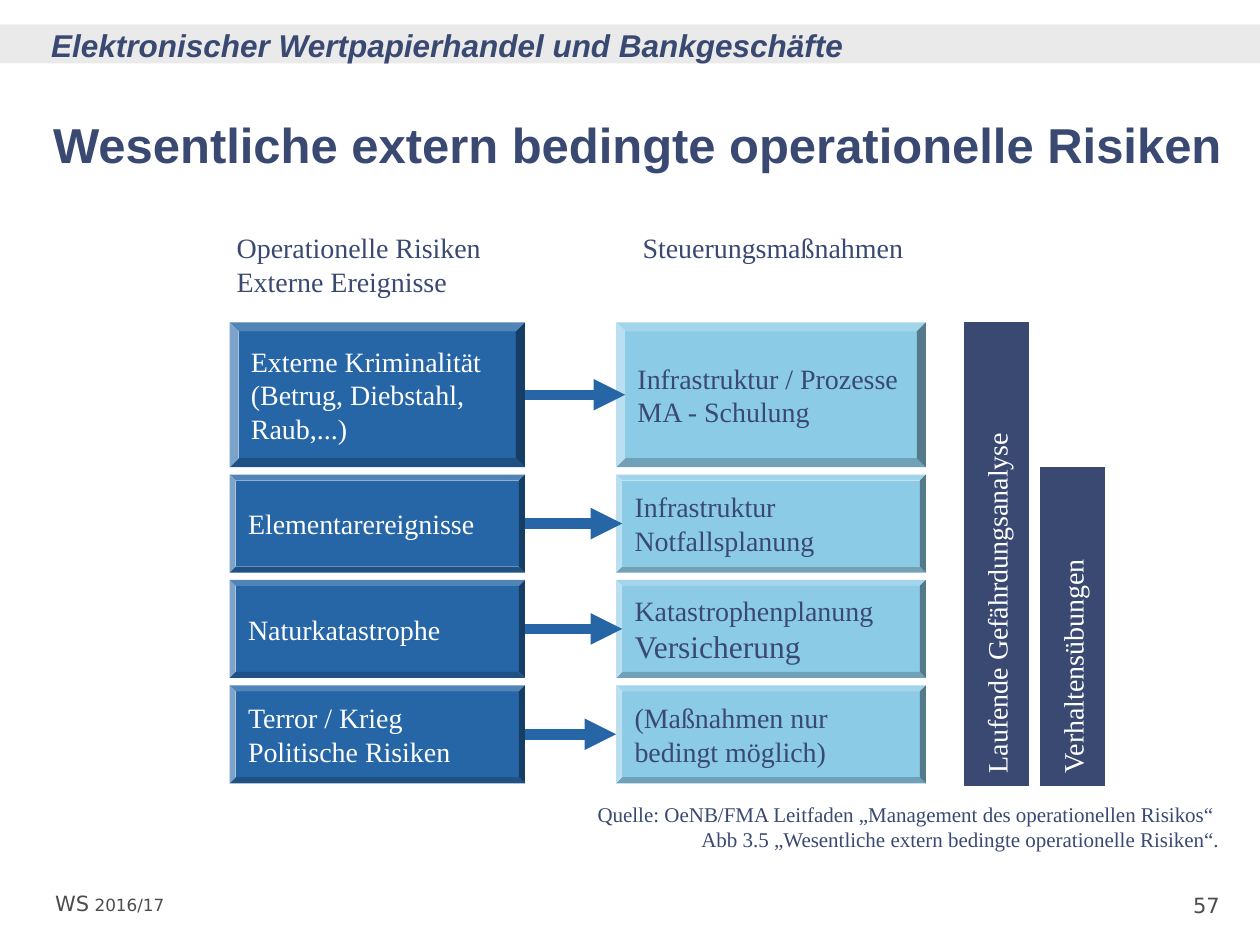
from lxml import etree
from pptx import Presentation
from pptx.dml.color import RGBColor
from pptx.enum.shapes import MSO_CONNECTOR, MSO_SHAPE
from pptx.enum.text import MSO_ANCHOR, PP_ALIGN
from pptx.oxml.ns import qn
from pptx.util import Pt

RECT, BAR, BEVEL = MSO_SHAPE.RECTANGLE, MSO_SHAPE.FLOWCHART_PROCESS, MSO_SHAPE.BEVEL
LINE = MSO_CONNECTOR.STRAIGHT
TOP, MID, LOW = MSO_ANCHOR.TOP, MSO_ANCHOR.MIDDLE, MSO_ANCHOR.BOTTOM
LEFT, RIGHT = PP_ALIGN.LEFT, PP_ALIGN.RIGHT
NAVY, BLUE, SKY, WHITE, GREY, BAND = "3A4972", "2666A6", "8BCBE6", "FFFFFF", "4D4D4D", "EAEAEA"
SERIF, SANS, SMALL = "Times New Roman", "Arial", "DejaVu Sans"


def color(code):
    return RGBColor.from_string(code)


def add(box, lines=(), kind=None, fill=None, ink=NAVY, font=SERIF, size=16,
        align=LEFT, anchor=TOP, pad=(5, 0), **style):
    place = [Pt(v) for v in box]
    if kind is None:
        shape = slide.shapes.add_textbox(*place)
    else:
        shape = slide.shapes.add_shape(kind, *place)
        shape.shadow.inherit = False
        shape.fill.solid()
        shape.fill.fore_color.rgb = color(fill)
        shape.line.fill.background()
    frame = shape.text_frame
    side, edge = Pt(pad[0]), Pt(pad[1])
    form = {"word_wrap": True, "vertical_anchor": anchor, "margin_left": side,
            "margin_right": side, "margin_top": edge, "margin_bottom": edge}
    for key, value in form.items():
        setattr(frame, key, value)
    for i, line in enumerate(lines):
        para = frame.paragraphs[0] if i == 0 else frame.add_paragraph()
        para.text = line
        para.alignment = align
        for run in para.runs:
            for key, value in {"name": font, "size": Pt(size), **style}.items():
                setattr(run.font, key, value)
            run.font.color.rgb = color(ink)
    return shape


deck = Presentation()
deck.slide_width, deck.slide_height = Pt(720), Pt(540)
slide = deck.slides.add_slide(deck.slide_layouts[6])

add((0, 13.9, 720, 22.3), kind=RECT, fill=BAND)
add((662.4, 510, 39.6, 17), ["57"], ink=GREY, font=SMALL, size=12, align=RIGHT)
add((29.3, 13.9, 515.5, 22.3), ["Elektronischer Wertpapierhandel und Bankgeschäfte"],
    font=SANS, size=18, anchor=LOW, pad=(0, 0), bold=True, italic=True)
term = add((26.6, 509, 86.4, 14.4), ["WS 2016/17"], ink=GREY, font=SMALL, size=12)
term.element.xpath(".//a:rPr")[0].set("cap", "small")

add((130.3, 131.8, 192.2, 38.2), ["Operationelle Risiken", "Externe Ereignisse"])
add((362.2, 131.8, 192.2, 19.4), ["Steuerungsmaßnahmen"])
add((84.2, 457.9, 617.8, 28.8),
    ["Quelle: OeNB/FMA Leitfaden „Management des operationellen Risikos“ \v"
     "Abb 3.5 „Wesentliche extern bedingte operationelle Risiken“."],
    size=12, align=RIGHT)

start, end = 184.2, 449
bars = [(551, start, "Laufende Gefährdungsanalyse"), (594.5, 267, "Verhaltensübungen")]
for left, top, text in bars:
    bar = add((left, top, 36.7, end - top), [text], BAR, NAVY, WHITE,
              anchor=MID, pad=(3.6, 3.6))
    bar.line.color.rgb = color(NAVY)
    bar.line.width = Pt(0.75)
    bar.element.txBody.bodyPr.set("vert", "vert270")

rows = [
    (82.8, ["Externe Kriminalität", "(Betrug, Diebstahl, Raub,...)"],
     ["Infrastruktur / Prozesse", "MA - Schulung"]),
    (56, ["Elementarereignisse"], ["Infrastruktur", "Notfallsplanung"]),
    (56, ["Naturkatastrophe"], ["Katastrophenplanung", "Versicherung"]),
    (56, ["Terror / Krieg", "Politische Risiken"], ["(Maßnahmen nur", "bedingt möglich)"]),
]
rim, gap = 0.062, 4.2
risk, step = 131.2, 352.1
wide, broad = 168.8, 177
top = start
for high, cause, action in rows:
    goal = add((step, top, broad, high), action, BEVEL, SKY, anchor=MID, pad=(7.2, 3.6))
    goal.adjustments[0] = rim
    for para in goal.text_frame.paragraphs:
        if para.text == "Versicherung":
            para.runs[0].font.size = Pt(18)

    mid = top + high / 2
    tip = step if cause == rows[-1][1] else step + rim * high
    arrow = slide.shapes.add_connector(LINE, Pt(risk + wide), Pt(mid), Pt(tip), Pt(mid))
    arrow.line.color.rgb = color(BLUE)
    arrow.line.width = Pt(6)
    etree.SubElement(arrow.line._get_or_add_ln(), qn("a:tailEnd"), type="triangle")
    etree.SubElement(arrow.element.spPr, qn("a:effectLst"))

    event = add((risk, top, wide, high), cause, BEVEL, BLUE, WHITE,
                anchor=MID, pad=(7.2, 3.6))
    event.adjustments[0] = rim
    top += high + gap

add((23.3, 48.2, 686, 67.7), ["Wesentliche extern bedingte operationelle Risiken"],
    font=SANS, size=28, anchor=MID, pad=(7.2, 3.6), bold=True)

deck.save("out.pptx")
